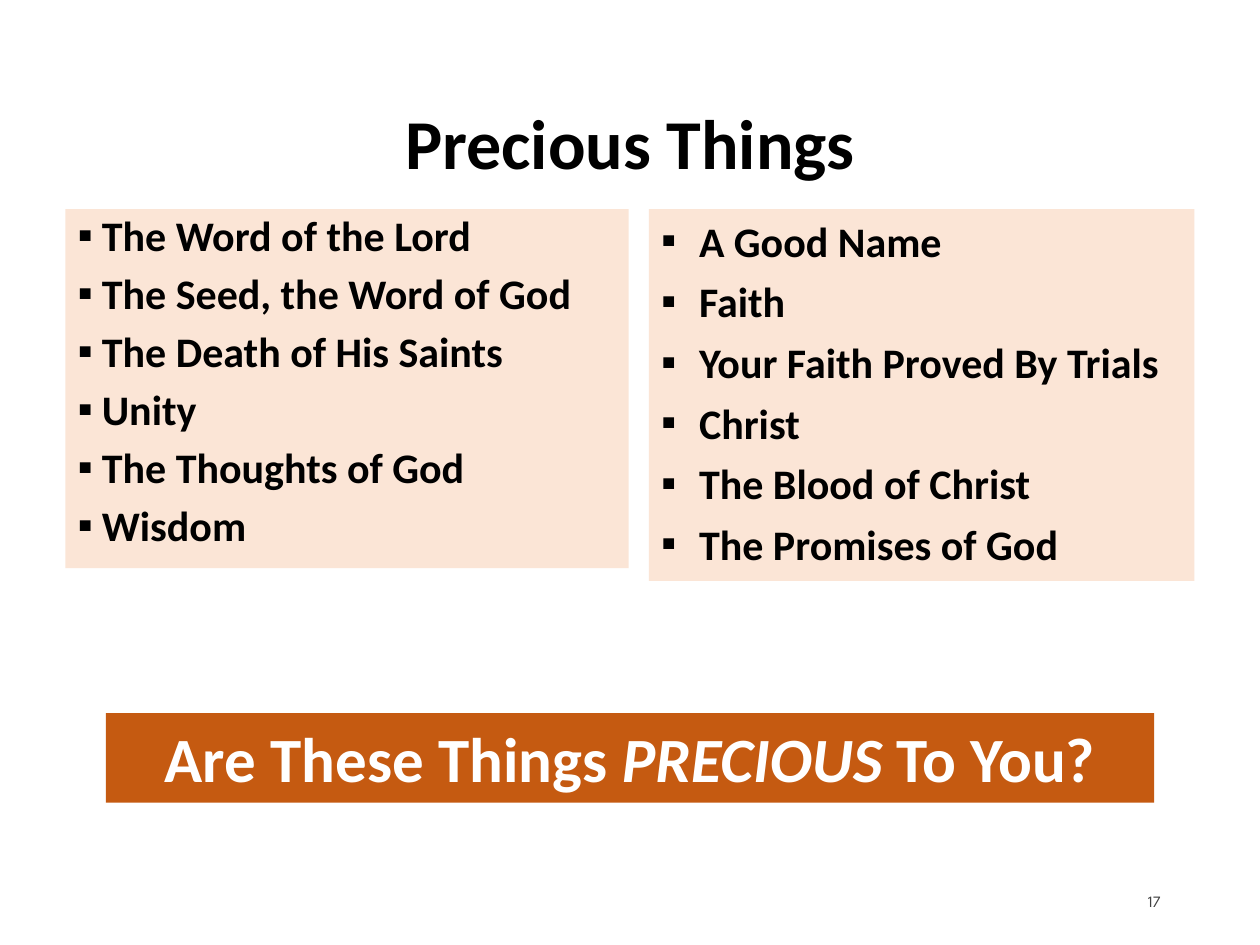
from dataclasses import dataclass

from lxml import etree
from pptx import Presentation
from pptx.dml.color import RGBColor
from pptx.enum.shapes import MSO_SHAPE
from pptx.enum.text import MSO_ANCHOR, MSO_AUTO_SIZE, PP_ALIGN
from pptx.oxml.ns import qn
from pptx.util import Inches, Pt

RECTANGLE = MSO_SHAPE.RECTANGLE
TOP, MIDDLE = MSO_ANCHOR.TOP, MSO_ANCHOR.MIDDLE
LEFT, CENTER, RIGHT = PP_ALIGN.LEFT, PP_ALIGN.CENTER, PP_ALIGN.RIGHT
FIT_SHAPE, FIT_NONE = MSO_AUTO_SIZE.SHAPE_TO_FIT_TEXT, MSO_AUTO_SIZE.NONE
TITLE_ONLY = 5
COLUMNS, ROWS = 100, 75

LEFT_THINGS = [
    "The Word of the Lord",
    "The Seed, the Word of God",
    "The Death of His Saints",
    "Unity",
    "The Thoughts of God",
    "Wisdom",
]
RIGHT_THINGS = [
    "A Good Name",
    "Faith",
    "Your Faith Proved By Trials",
    "Christ",
    "The Blood of Christ",
    "The Promises of God",
]


@dataclass(frozen=True)
class Theme:
    font: str = "Calibri"
    number_font: str = "League Spartan"
    ink: str = "000000"
    light: str = "FFFFFF"
    muted: str = "404040"
    panel: str = "FBE5D6"
    accent: str = "C55A11"
    title_size: int = 40
    question_size: int = 36
    list_size: int = 24
    number_size: int = 9


class SlideBuilder:
    """Places styled elements on one slide, measured in grid columns and rows."""

    def __init__(self, presentation, theme):
        self.theme = theme
        self.column = presentation.slide_width / COLUMNS
        self.row = presentation.slide_height / ROWS
        self.slide = presentation.slides.add_slide(presentation.slide_layouts[TITLE_ONLY])

    def place(self, left, top, width, height):
        return (round(left * self.column), round(top * self.row),
                round(width * self.column), round(height * self.row))

    def format_runs(self, paragraph, size, color, font=None, bold=True):
        for run in paragraph.runs:
            run.font.name = font or self.theme.font
            run.font.size = Pt(size)
            run.font.bold = bold
            run.font.color.rgb = RGBColor.from_string(color)

    def set_frame(self, shape, anchor, auto_size):
        frame = shape.text_frame
        frame.word_wrap = True
        frame.vertical_anchor = anchor
        frame.auto_size = auto_size
        return frame

    def title(self, area, text):
        shape = self.slide.shapes.title
        shape.left, shape.top, shape.width, shape.height = self.place(*area)
        frame = self.set_frame(shape, MIDDLE, FIT_SHAPE)
        frame.text = text
        frame.paragraphs[0].alignment = CENTER
        self.format_runs(frame.paragraphs[0], self.theme.title_size, self.theme.ink)

    def panel(self, area, fill):
        shape = self.slide.shapes.add_shape(RECTANGLE, *self.place(*area))
        shape.shadow.inherit = False
        shape.fill.solid()
        shape.fill.fore_color.rgb = RGBColor.from_string(fill)
        shape.line.fill.background()
        return self.set_frame(shape, TOP, FIT_SHAPE)

    def bullet_list(self, area, items, indent, gap, line_spacing):
        frame = self.panel(area, self.theme.panel)
        frame.text = "\n".join(items)
        for index, paragraph in enumerate(frame.paragraphs):
            paragraph.alignment = LEFT
            paragraph.line_spacing = line_spacing
            paragraph.space_before = Pt(gap if index else 0)
            properties = paragraph._p.get_or_add_pPr()
            properties.set("marL", str(Inches(indent)))
            properties.set("indent", str(-Inches(indent)))
            etree.SubElement(properties, qn("a:buFont"), typeface=self.theme.font)
            etree.SubElement(properties, qn("a:buChar"), char="▪")
            self.format_runs(paragraph, self.theme.list_size, self.theme.ink)

    def question(self, area, before, stressed, after):
        paragraph = self.panel(area, self.theme.accent).paragraphs[0]
        paragraph.alignment = CENTER
        for text in (before, stressed, after):
            run = paragraph.add_run()
            run.text = text
            run.font.italic = text == stressed
        self.format_runs(paragraph, self.theme.question_size, self.theme.light)

    def page_number(self, area, text):
        shape = self.slide.shapes.add_textbox(*self.place(*area))
        frame = self.set_frame(shape, MIDDLE, FIT_NONE)
        frame.text = text
        frame.paragraphs[0].alignment = RIGHT
        self.format_runs(frame.paragraphs[0], self.theme.number_size, self.theme.muted,
                         self.theme.number_font, bold=False)


def main():
    presentation = Presentation()
    presentation.slide_width, presentation.slide_height = Inches(10), Inches(7.5)
    builder = SlideBuilder(presentation, Theme())
    builder.title((6.9, 7.4, 86.2, 7.7), "Precious Things")
    builder.bullet_list((5.2, 16.6, 44.7, 28.5), LEFT_THINGS,
                        indent=0.19, gap=7.2, line_spacing=0.9)
    builder.bullet_list((51.5, 16.6, 43.3, 29.5), RIGHT_THINGS,
                        indent=0.3, gap=5.8, line_spacing=1.0)
    builder.question((8.4, 56.6, 83.2, 7.1), "Are These Things ", "PRECIOUS", " To You?")
    builder.page_number((66.2, 69.5, 26.9, 4), "17")
    presentation.save("out.pptx")


if __name__ == "__main__":
    main()
